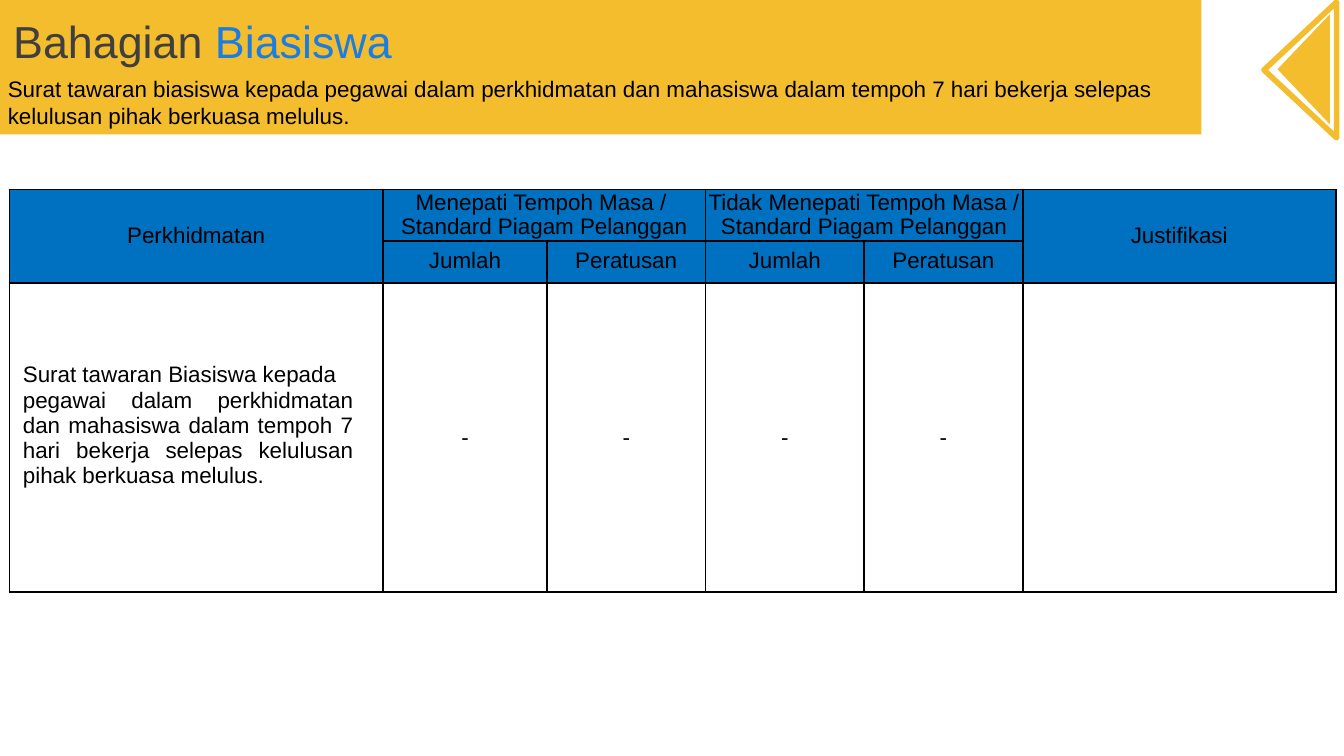
from pptx import Presentation
from pptx.dml.color import RGBColor
from pptx.enum.shapes import MSO_SHAPE
from pptx.enum.text import MSO_ANCHOR, PP_ALIGN
from pptx.oxml import parse_xml
from pptx.oxml.ns import nsdecls
from pptx.util import Inches, Pt

AMBER = RGBColor(0xF4, 0xBD, 0x2D)
HEADER_BLUE = RGBColor(0x00, 0x70, 0xC0)
TITLE_BLUE = RGBColor(0x1C, 0x7D, 0xE1)
GREY = RGBColor(0x3F, 0x3F, 0x3F)
BLACK = RGBColor(0, 0, 0)
FONT = "Arial"
COLUMNS = [2.78, 1.22, 1.18, 1.18, 1.18, 2.33]
ROWS = [0.38, 0.31, 2.3]
WIDE_INSETS = (0.1, 0.05, 0.1, 0.05)
SERVICE_INSETS = (0.1, 0.05, 0.22, 0.23)
NO_INSETS = (0, 0, 0, 0)
DASH_INSETS = (0.07, 0.05, 0.07, 0.05)


def style_span(span, size, color):
    """Set the font of one run."""
    span.font.name = FONT
    span.font.size = Pt(size)
    span.font.color.rgb = color


def fill_frame(frame, text, align, spacing=None):
    """Write black body text, one paragraph a line."""
    frame.text = text
    for para in frame.paragraphs:
        para.alignment = align
        para.line_spacing = spacing
        for span in para.runs:
            style_span(span, 12, BLACK)


def add_text_box(page, left, top, width, height):
    """Add a wrapping text box and return its frame."""
    box = page.shapes.add_textbox(*map(Inches, (left, top, width, height)))
    box.text_frame.word_wrap = True
    return box.text_frame


def add_block(page, kind, place, fill=None, line=None, rotation=0):
    """Add a flat shape, either filled or outlined."""
    block = page.shapes.add_shape(kind, *map(Inches, place))
    block.shadow.inherit = False
    block.rotation = rotation
    if fill is None:
        block.fill.background()
    else:
        block.fill.solid()
        block.fill.fore_color.rgb = fill
    if line is None:
        block.line.fill.background()
    else:
        block.line.color.rgb = line
        block.line.width = Pt(3)


def add_title(page):
    """Add the two-coloured title."""
    frame = add_text_box(page, 0, 0.01, 4.65, 0.59)
    frame.vertical_anchor = MSO_ANCHOR.MIDDLE
    para = frame.paragraphs[0]
    for word, color in (("Bahagian ", GREY), ("Biasiswa", TITLE_BLUE)):
        span = para.add_run()
        span.text = word
        style_span(span, 24, color)


def add_borders(cell):
    """Draw a thin black line on each side of a cell."""
    properties = cell._tc.get_or_add_tcPr()
    for index, side in enumerate(("lnL", "lnR", "lnT", "lnB")):
        properties.insert(index, parse_xml(
            f'<a:{side} {nsdecls("a")} w="{Pt(1)}"><a:solidFill>'
            f'<a:srgbClr val="{BLACK}"/></a:solidFill></a:{side}>'))


def write_cell(cell, text, insets, align=PP_ALIGN.CENTER, spacing=None):
    """Fill a cell with middle-anchored text."""
    cell.vertical_anchor = MSO_ANCHOR.MIDDLE
    (cell.margin_left, cell.margin_top,
     cell.margin_right, cell.margin_bottom) = map(Inches, insets)
    fill_frame(cell.text_frame, text, align, spacing)


def add_grid(page):
    """Add the empty bordered table with its blue header rows."""
    table = page.shapes.add_table(
        len(ROWS), len(COLUMNS), Inches(0.07), Inches(1.41),
        Inches(sum(COLUMNS)), Inches(sum(ROWS))).table
    for column, width in zip(table.columns, COLUMNS):
        column.width = Inches(width)
    for index, (row, height) in enumerate(zip(table.rows, ROWS)):
        row.height = Inches(height)
        for cell in row.cells:
            if index < 2:
                cell.fill.solid()
                cell.fill.fore_color.rgb = HEADER_BLUE
            else:
                cell.fill.background()
            add_borders(cell)
    for first, last in (((0, 0), (1, 0)), ((0, 1), (0, 2)),
                        ((0, 3), (0, 4)), ((0, 5), (1, 5))):
        table.cell(*first).merge(table.cell(*last))
    return table


def add_service_table(page):
    """Add the table of services and how far they kept to time."""
    table = add_grid(page)
    write_cell(table.cell(0, 0), "Perkhidmatan", WIDE_INSETS)
    write_cell(table.cell(0, 1), "Menepati Tempoh Masa / \nStandard Piagam Pelanggan",
               NO_INSETS, spacing=0.96)
    write_cell(table.cell(0, 3), "Tidak Menepati Tempoh Masa / Standard Piagam Pelanggan",
               NO_INSETS, spacing=0.96)
    write_cell(table.cell(0, 5), "Justifikasi", NO_INSETS)
    for column in range(1, 5):
        label = "Jumlah" if column % 2 else "Peratusan"
        write_cell(table.cell(1, column), label, NO_INSETS, spacing=0.88)
        write_cell(table.cell(2, column), "-", DASH_INSETS)
    write_cell(table.cell(2, 0),
               "Surat tawaran Biasiswa kepada \npegawai dalam perkhidmatan "
               "dan mahasiswa dalam tempoh 7 hari bekerja selepas "
               "kelulusan pihak berkuasa melulus.", SERVICE_INSETS, PP_ALIGN.JUSTIFY)


def main():
    """Build the slide and save it."""
    deck = Presentation()
    deck.slide_width = Inches(10)
    deck.slide_height = deck.slide_width * 9 // 16
    page = deck.slides.add_slide(deck.slide_layouts[6])
    triangle = MSO_SHAPE.ISOSCELES_TRIANGLE
    add_block(page, triangle, (9.29, 0.32, 0.82, 0.39), fill=AMBER, rotation=270)
    add_block(page, triangle, (9.17, 0.25, 1.01, 0.54), line=AMBER, rotation=270)
    add_block(page, MSO_SHAPE.RECTANGLE, (0, 0, 8.94, 1), fill=AMBER)
    fill_frame(add_text_box(page, -0.04, 0.51, 8.91, 0.5),
               "Surat tawaran biasiswa kepada pegawai dalam perkhidmatan dan mahasiswa "
               "dalam tempoh 7 hari bekerja selepas \nkelulusan pihak berkuasa melulus.",
               PP_ALIGN.JUSTIFY)
    add_title(page)
    add_service_table(page)
    deck.save("out.pptx")


if __name__ == "__main__":
    main()
